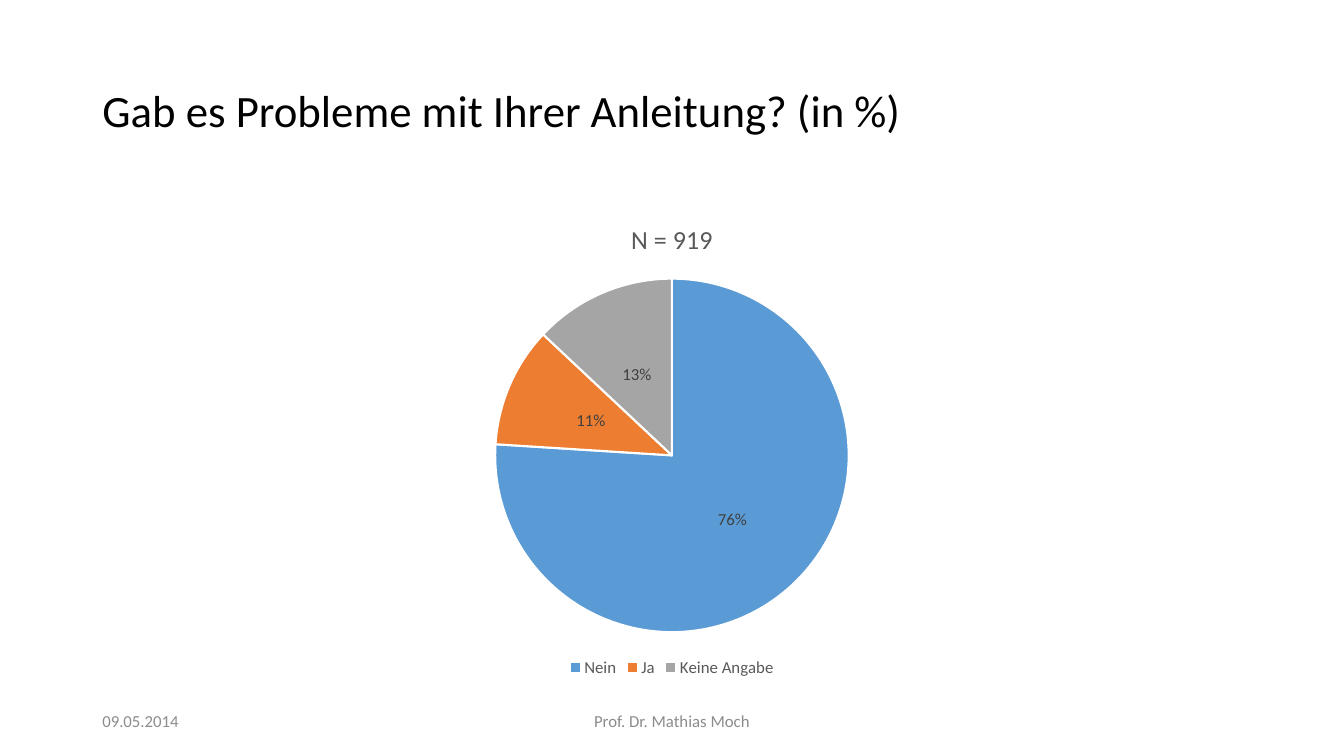
from pptx import Presentation
from pptx.chart.data import CategoryChartData
from pptx.dml.color import RGBColor
from pptx.enum import chart as ch, text
from pptx.util import Pt

BLACK = RGBColor(0x00, 0x00, 0x00)
WHITE = RGBColor(0xFF, 0xFF, 0xFF)
CHART_GREY = RGBColor(0x59, 0x59, 0x59)
LABEL_GREY = RGBColor(0x40, 0x40, 0x40)
FOOTER_GREY = RGBColor(0x8C, 0x8C, 0x8C)
BLUE = RGBColor(0x5B, 0x9B, 0xD5)
ORANGE = RGBColor(0xED, 0x7D, 0x31)
GREY = RGBColor(0xA5, 0xA5, 0xA5)
ANSWERS = [("Nein", 0.76, BLUE), ("Ja", 0.11, ORANGE), ("Keine Angabe", 0.13, GREY)]
LEFT, WIDTH = 66, 828


def style_font(font, size, color):
    font.name = "Calibri"
    font.size = Pt(size)
    font.bold = False
    font.color.rgb = color


def write(frame, words, size=12, color=FOOTER_GREY, align=text.PP_ALIGN.LEFT, spacing=1.0):
    frame.word_wrap = True
    frame.auto_size = text.MSO_AUTO_SIZE.NONE
    frame.vertical_anchor = text.MSO_ANCHOR.MIDDLE
    para = frame.paragraphs[0]
    para.alignment = align
    para.line_spacing = spacing
    span = para.add_run()
    span.text = words
    style_font(span.font, size, color)


deck = Presentation()
deck.slide_width, deck.slide_height = Pt(960), Pt(540)
page = deck.slides.add_slide(deck.slide_layouts[5])

# Title
title = page.shapes.title
title.left, title.top, title.width, title.height = Pt(LEFT), Pt(28.75), Pt(WIDTH), Pt(104.5)
write(title.text_frame, "Gab es Probleme mit Ihrer Anleitung? (in %)",
      size=32, color=BLACK, spacing=0.9)

# Pie chart
data = CategoryChartData(number_format="0%")
data.categories = [name for name, share, color in ANSWERS]
data.add_series("Series 1", [share for name, share, color in ANSWERS])
pie = page.shapes.add_chart(ch.XL_CHART_TYPE.PIE, Pt(LEFT), Pt(144),
                            Pt(WIDTH), Pt(342.7), data).chart
style_font(pie.font, 10, BLACK)

pie.has_title = True
heading = pie.chart_title.text_frame
heading.text = "N = 919"
style_font(heading.paragraphs[0].runs[0].font, 18.6, CHART_GREY)
pie.chart_title.include_in_layout = False

pie.has_legend = True
pie.legend.position = ch.XL_LEGEND_POSITION.BOTTOM
pie.legend.include_in_layout = False
style_font(pie.legend.font, 12, CHART_GREY)

plot = pie.plots[0]
plot.vary_by_categories = True
for index, (name, share, color) in enumerate(ANSWERS):
    wedge = plot.series[0].points[index].format
    wedge.fill.solid()
    wedge.fill.fore_color.rgb = color
    wedge.line.color.rgb = WHITE
    wedge.line.width = Pt(1.5)

labels = plot.series[0].data_labels
labels.show_value = True
labels.number_format = "0%"
labels.number_format_is_linked = False
labels.position = ch.XL_LABEL_POSITION.CENTER
style_font(labels.font, 12, LABEL_GREY)

# Date and footer
for words, left, width, align in [
    ("09.05.2014", LEFT, 216, text.PP_ALIGN.LEFT),
    ("Prof. Dr. Mathias Moch", 318, 324, text.PP_ALIGN.CENTER),
]:
    box = page.shapes.add_textbox(Pt(left), Pt(500.5), Pt(width), Pt(28.75))
    write(box.text_frame, words, align=align)

deck.save("out.pptx")
